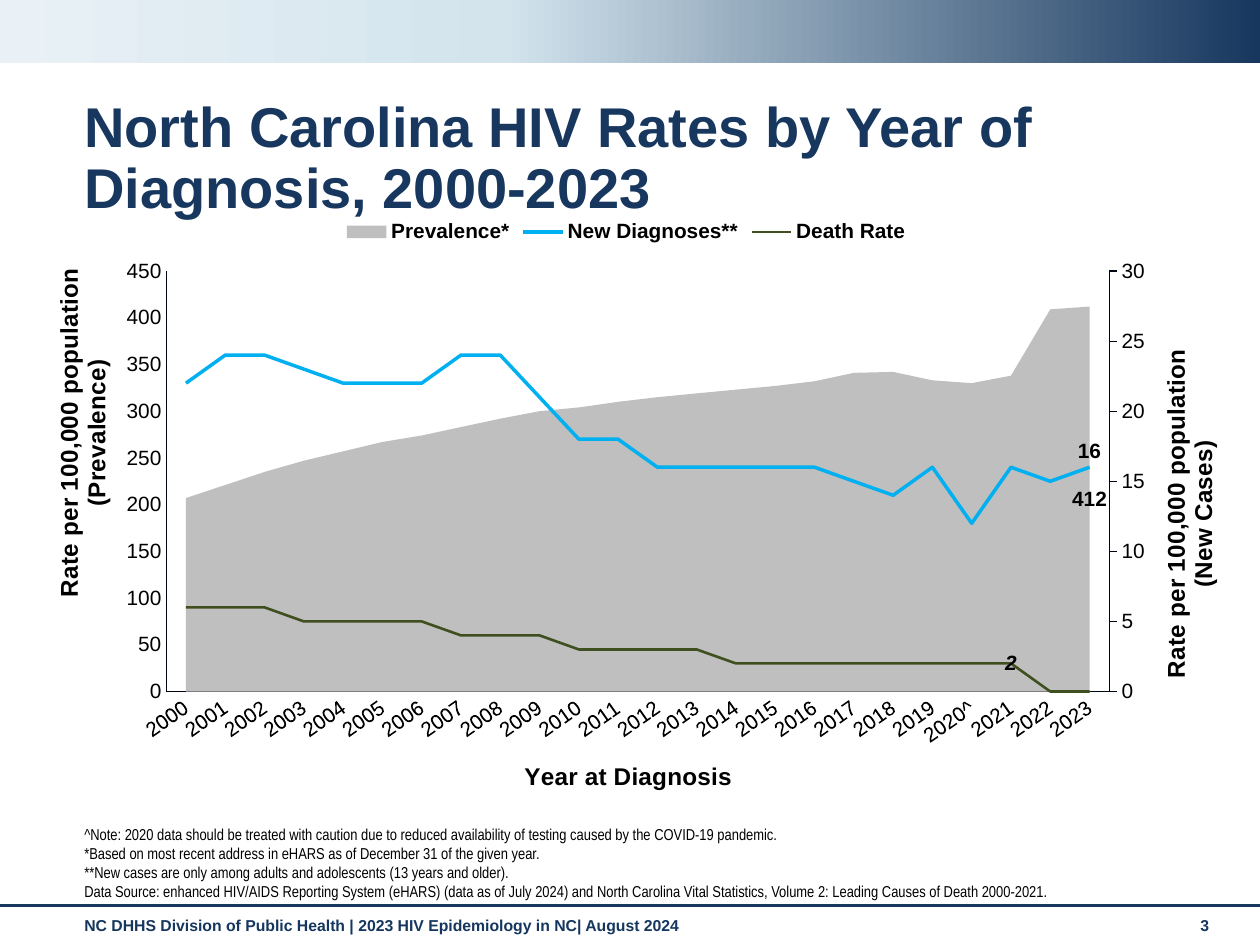
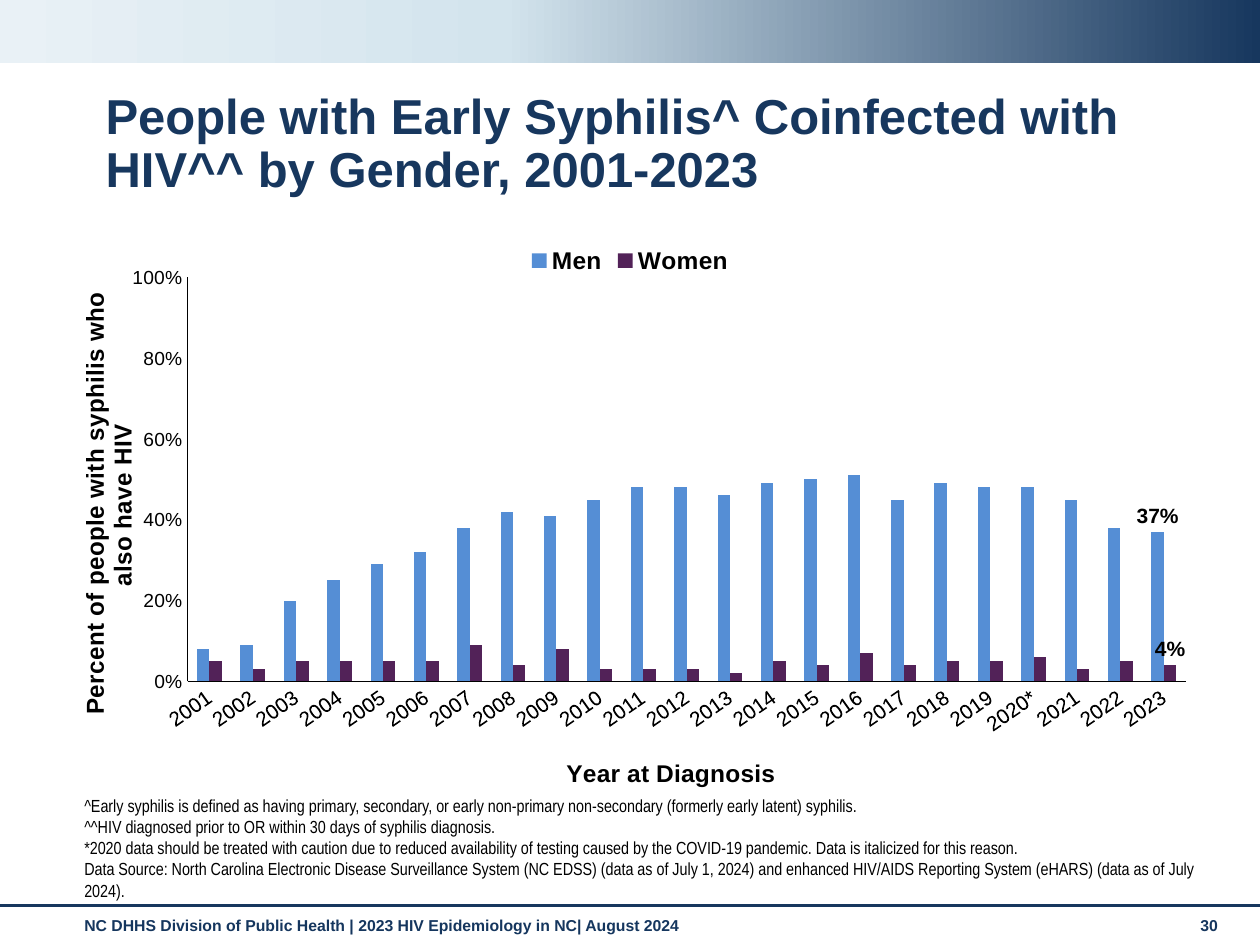
from copy import deepcopy
from dataclasses import dataclass

from pptx import Presentation
from pptx.chart.axis import CategoryAxis, ValueAxis
from pptx.chart.data import CategoryChartData
from pptx.dml.color import RGBColor
from pptx.enum.chart import (XL_CHART_TYPE, XL_LABEL_POSITION, XL_LEGEND_POSITION,
                             XL_MARKER_STYLE, XL_TICK_MARK)
from pptx.enum.shapes import MSO_CONNECTOR, MSO_SHAPE
from pptx.enum.text import MSO_ANCHOR
from pptx.oxml import parse_xml
from pptx.oxml.ns import nsdecls, qn
from pptx.util import Cm, Pt

AREA, COLUMN = XL_CHART_TYPE.AREA, XL_CHART_TYPE.COLUMN_CLUSTERED
ABOVE, CENTER, END = (XL_LABEL_POSITION.ABOVE, XL_LABEL_POSITION.CENTER,
                      XL_LABEL_POSITION.OUTSIDE_END)
NO_TICK, OUT_TICK = XL_TICK_MARK.NONE, XL_TICK_MARK.OUTSIDE
TOP, BOTTOM = MSO_ANCHOR.TOP, MSO_ANCHOR.BOTTOM
WIDE, HIGH = 25.4, 19.05
LEFT = 1.45
FOOTER = "NC DHHS Division of Public Health | 2023 HIV Epidemiology in NC| August 2024"


@dataclass(frozen=True)
class Theme:
    font: str = "Arial"
    narrow: str = "Arial Narrow"
    navy: str = "17375E"
    foot: str = "15365E"
    ink: str = "000000"
    axis: str = "000514"
    band: tuple = ((0, "17375E"), (0.6, "D3E4ED"), (1, "E9F1F6"))
    gray: str = "BFBFBF"
    cyan: str = "00B0F0"
    olive: str = "404F20"
    blue: str = "558ED5"
    plum: str = "522258"
    small: float = 9
    label: float = 12
    head: float = 14


THEME = Theme()


def rgb(code):
    return RGBColor.from_string(code)


def style(font, size, color=THEME.ink, bold=False, italic=False, face=THEME.font):
    font.name, font.size, font.bold, font.italic = face, Pt(size), bold, italic
    font.color.rgb = rgb(color)


def write(frame, text, space=None, **form):
    """Fill a text frame, one paragraph for each line of text."""
    for n, line in enumerate(text.split("\n")):
        para = frame.add_paragraph() if n else frame.paragraphs[0]
        if space:
            para.line_spacing = space
        run = para.add_run()
        run.text = line
        style(run.font, **form)


def place(parent, spot, after=None, inner=False):
    """Give a chart part a manual layout in fractions of the chart."""
    for old in parent.findall(qn("c:layout")):
        parent.remove(old)
    tags = [("xMode", "edge"), ("yMode", "edge"), *zip("xywh", spot)]
    if inner:
        tags.insert(0, ("layoutTarget", "inner"))
    body = "".join(f'<c:{tag} val="{val}"/>' for tag, val in tags)
    node = parse_xml(f'<c:layout {nsdecls("c")}><c:manualLayout>{body}'
                     '</c:manualLayout></c:layout>')
    if after is None:
        parent.insert(0, node)
    else:
        after.addnext(node)


class Deck:
    def __init__(self, theme):
        self.theme = theme
        self.prs = Presentation()
        self.prs.slide_width, self.prs.slide_height = Cm(WIDE), Cm(HIGH)
        self.slide = None

    def text(self, text, box, anchor=TOP, **form):
        frame = self.slide.shapes.add_textbox(*map(Cm, box)).text_frame
        frame.word_wrap = True
        frame.vertical_anchor = anchor
        write(frame, text, **form)

    def band(self):
        bar = self.slide.shapes.add_shape(MSO_SHAPE.RECTANGLE, 0, 0, Cm(WIDE), Cm(1.27))
        bar.shadow.inherit = False
        bar.line.fill.background()
        bar.fill.gradient()
        bar.fill.gradient_angle = 180
        stops = bar.element.xpath(".//a:gsLst")[0]
        stops.append(deepcopy(stops[-1]))
        for stop, (pos, color) in zip(bar.fill.gradient_stops, self.theme.band):
            stop.position = pos
            stop.color.rgb = rgb(color)

    def rule(self, top):
        line = self.slide.shapes.add_connector(
            MSO_CONNECTOR.STRAIGHT, 0, Cm(top), Cm(WIDE), Cm(top))
        line.line.color.rgb = rgb(self.theme.navy)
        line.line.width = Pt(1.75)
        line.element.spPr.append(parse_xml(f'<a:effectLst {nsdecls("a")}/>'))

    def page(self, number, title, spot, size, notes, note_size):
        t = self.theme
        self.slide = self.prs.slides.add_slide(self.prs.slide_layouts[6])
        foot = dict(size=t.small, color=t.foot, bold=True)
        self.text(FOOTER, (LEFT, 18.34, 22.2, 0.74), **foot)
        self.text(str(number), (23.95, 18.34, 1.12, 0.76), **foot)
        self.band()
        self.rule(18.26)
        self.text(title, (*spot, 23.19, 1.52), size=size, color=t.navy,
                  bold=True, space=0.9)
        self.text(notes, (LEFT, 17.75, 23.6, 0.53), BOTTOM, size=note_size,
                  face=t.narrow)

    def chart(self, kind, box, cats, rows, form, plot, legend):
        data = CategoryChartData(number_format=form)
        data.categories = cats
        for name, vals in rows.items():
            data.add_series(name, vals)
        chart = self.slide.shapes.add_chart(kind, *map(Cm, box), data).chart
        style(chart.font, self.theme.label, bold=True)
        chart.has_title = False
        chart.has_legend = True
        chart.legend.position = XL_LEGEND_POSITION.TOP
        chart.legend.include_in_layout = False
        style(chart.legend.font, legend, bold=True)
        chart.plots[0].vary_by_categories = False
        place(chart.element.xpath(".//c:plotArea")[0], plot, inner=True)
        return chart

    def axis(self, axis, title, spot, size, color, width, upright=False, tick=NO_TICK):
        axis.has_major_gridlines = False
        axis.major_tick_mark, axis.minor_tick_mark = tick, NO_TICK
        axis.format.line.color.rgb = rgb(color)
        axis.format.line.width = Pt(width)
        style(axis.tick_labels.font, size)
        axis.has_title = False
        axis.has_title = True
        head = axis.axis_title
        write(head.text_frame, title, size=self.theme.head, bold=True)
        if upright:
            head.element.xpath(".//a:bodyPr")[0].set("rot", "-5400000")
        place(head.element, spot, after=head.element.find(qn("c:tx")))

    def years(self, chart, spot, color, width):
        self.axis(chart.category_axis, "Year at Diagnosis", spot, self.theme.label,
                  color, width)
        body = chart.element.xpath(".//c:catAx/c:txPr/a:bodyPr")[0]
        body.set("rot", "-2100000")

    def scale(self, axis, top, step, form):
        axis.minimum_scale, axis.maximum_scale, axis.major_unit = 0, top, step
        axis.tick_labels.number_format = form
        axis.tick_labels.number_format_is_linked = False

    def label(self, series, index, form, pos=None, italic=False):
        """Show the value of one point only."""
        tag = series.points[index].data_label
        style(tag.font, self.theme.label, bold=True, italic=italic)
        if pos is not None:
            tag.position = pos
        series.data_labels.show_value = False
        series.data_labels.number_format = form
        series.data_labels.number_format_is_linked = False

    def split(self, chart):
        """Move all but the first series to lines on a right axis; return that axis."""
        area = chart.element.xpath(".//c:areaChart")[0]
        cat, val = (chart.element.xpath(f".//c:{tag}")[0] for tag in ("catAx", "valAx"))
        val.find(qn("c:crossBetween")).set("val", "between")
        lines = parse_xml(
            f'<c:lineChart {nsdecls("c")}><c:grouping val="standard"/>'
            '<c:varyColors val="0"/><c:marker val="1"/>'
            '<c:axId val="11"/><c:axId val="12"/></c:lineChart>')
        for n, ser in enumerate(area.findall(qn("c:ser"))[1:]):
            lines.insert(2 + n, ser)
        area.addnext(lines)
        cat2, val2 = deepcopy(cat), deepcopy(val)
        val.addnext(val2)
        val2.addnext(cat2)
        for node, own, other in ((cat2, "11", "12"), (val2, "12", "11")):
            node.find(qn("c:axId")).set("val", own)
            node.find(qn("c:crossAx")).set("val", other)
        val2.find(qn("c:axPos")).set("val", "r")
        val2.find(qn("c:crosses")).set("val", "max")
        hidden = CategoryAxis(cat2)
        hidden.has_title = False
        hidden.visible = False
        return ValueAxis(val2)


def rates(deck):
    t = deck.theme
    deck.page(
        3, "North Carolina HIV Rates by Year of Diagnosis, 2000-2023", (LEFT, 1.88), 32,
        "^Note: 2020 data should be treated with caution due to reduced availability of "
        "testing caused by the COVID-19 pandemic.\n"
        "*Based on most recent address in eHARS as of December 31 of the given year.\n"
        "**New cases are only among adults and adolescents (13 years and older).\n"
        "Data Source: enhanced HIV/AIDS Reporting System (eHARS) (data as of July 2024) and "
        "North Carolina Vital Statistics, Volume 2: Leading Causes of Death 2000-2021.",
        t.small)
    cats = ["2020^" if y == 2020 else str(y) for y in range(2000, 2024)]
    rows = {
        "Prevalence*": (207, 221, 235, 247, 257, 267, 274, 283, 292, 300, 304, 310,
                        315, 319, 323, 327, 332, 341, 342, 333, 330, 338, 409, 412),
        "New Diagnoses**": (22, 24, 24, 23, 22, 22, 22, 24, 24, 21, 18, 18,
                            16, 16, 16, 16, 16, 15, 14, 16, 12, 16, 15, 16),
        "Death Rate": (6, 6, 6, 5, 5, 5, 5, 4, 4, 4, 3, 3,
                       3, 3, 2, 2, 2, 2, 2, 2, 2, 2, None, None),
    }
    form = "#,##0"
    chart = deck.chart(AREA, (0.74, 4.17, 23.93, 11.91), cats, rows, form,
                       (0.11, 0.11, 0.8, 0.72), t.label)
    deck.years(chart, (0.41, 0.94), t.axis, 0.25)
    left = chart.value_axis
    deck.axis(left, "Rate per 100,000 population (Prevalence)", (0.01, 0.1),
              t.label, t.axis, 0.75, upright=True)
    deck.scale(left, 450, 50, form)
    right = deck.split(chart)
    deck.axis(right, "Rate per 100,000 population\n(New Cases)", (0.95, 0.24),
              t.label, t.axis, 0.75, upright=True, tick=OUT_TICK)
    deck.scale(right, 30, 5, "0")

    area = chart.plots[0].series[0]
    area.format.fill.solid()
    area.format.fill.fore_color.rgb = rgb(t.gray)
    deck.label(area, 23, form)
    looks = ((t.cyan, 2, 23, ABOVE, False), (t.olive, 1.5, 21, CENTER, True))
    for line, (color, width, last, pos, italic) in zip(chart.plots[1].series, looks):
        line.smooth = False
        line.marker.style = XL_MARKER_STYLE.NONE
        line.format.line.color.rgb = rgb(color)
        line.format.line.width = Pt(width)
        deck.label(line, last, form, pos, italic)


def gender(deck):
    t = deck.theme
    deck.page(
        30, "People with Early Syphilis^ Coinfected with HIV^^ by Gender, 2001-2023",
        (1.88, 1.73), 28,
        "^Early syphilis is defined as having primary, secondary, or early non-primary "
        "non-secondary (formerly early latent) syphilis.\n"
        "^^HIV diagnosed prior to OR within 30 days of syphilis diagnosis.\n"
        "*2020 data should be treated with caution due to reduced availability of testing "
        "caused by the COVID-19 pandemic. Data is italicized for this reason.\n"
        "Data Source: North Carolina Electronic Disease Surveillance System (NC EDSS) (data "
        "as of July 1, 2024) and enhanced HIV/AIDS Reporting System (eHARS) (data as of "
        "July 2024).", 10)
    cats = ["2020*" if y == 2020 else str(y) for y in range(2001, 2024)]
    rows = {
        "Men": (0.08, 0.09, 0.2, 0.25, 0.29, 0.32, 0.38, 0.42, 0.41, 0.45, 0.48, 0.48,
                0.46, 0.49, 0.5, 0.51, 0.45, 0.49, 0.48, 0.48, 0.45, 0.38, 0.37),
        "Women": (0.05, 0.03, 0.05, 0.05, 0.05, 0.05, 0.09, 0.04, 0.08, 0.03, 0.03, 0.03,
                  0.02, 0.05, 0.04, 0.07, 0.04, 0.05, 0.05, 0.06, 0.03, 0.05, 0.04),
    }
    form = "0%"
    chart = deck.chart(COLUMN, (1.27, 4.7, 22.86, 11.33), cats, rows, form,
                       (0.11, 0.08, 0.88, 0.73), t.head)
    deck.years(chart, (0.44, 0.94), t.ink, 0.25)
    deck.axis(chart.value_axis, "Percent of people with syphilis who also have HIV",
              (0.01, 0.11), 11, t.ink, 0.25, upright=True)
    deck.scale(chart.value_axis, 1, 0.2, form)
    plot = chart.plots[0]
    plot.gap_width, plot.overlap = 150, 0
    for bars, color in zip(plot.series, (t.blue, t.plum)):
        bars.format.fill.solid()
        bars.format.fill.fore_color.rgb = rgb(color)
        deck.label(bars, 22, form, END)


def main():
    deck = Deck(THEME)
    rates(deck)
    gender(deck)
    deck.prs.save("out.pptx")


if __name__ == "__main__":
    main()
